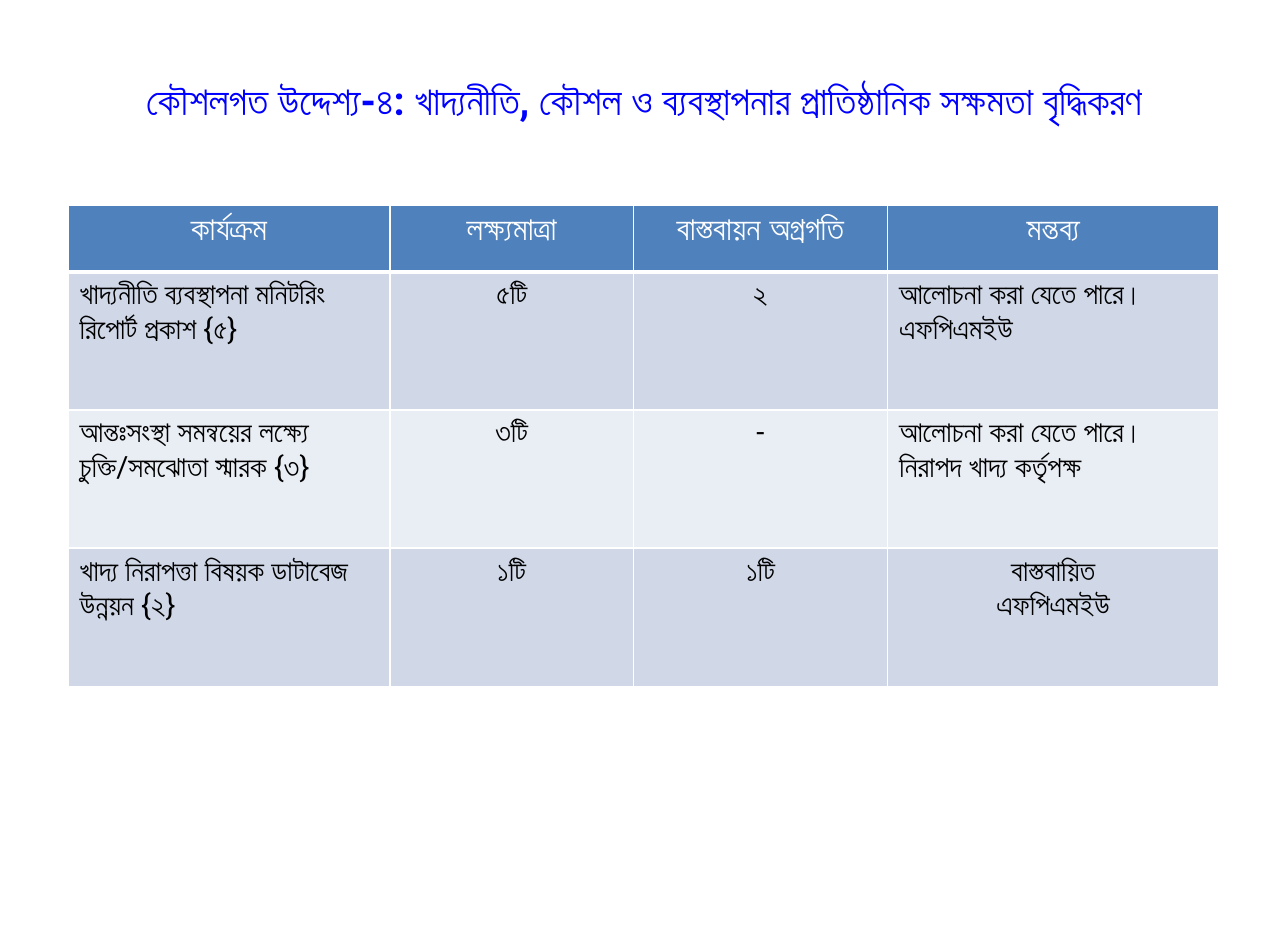
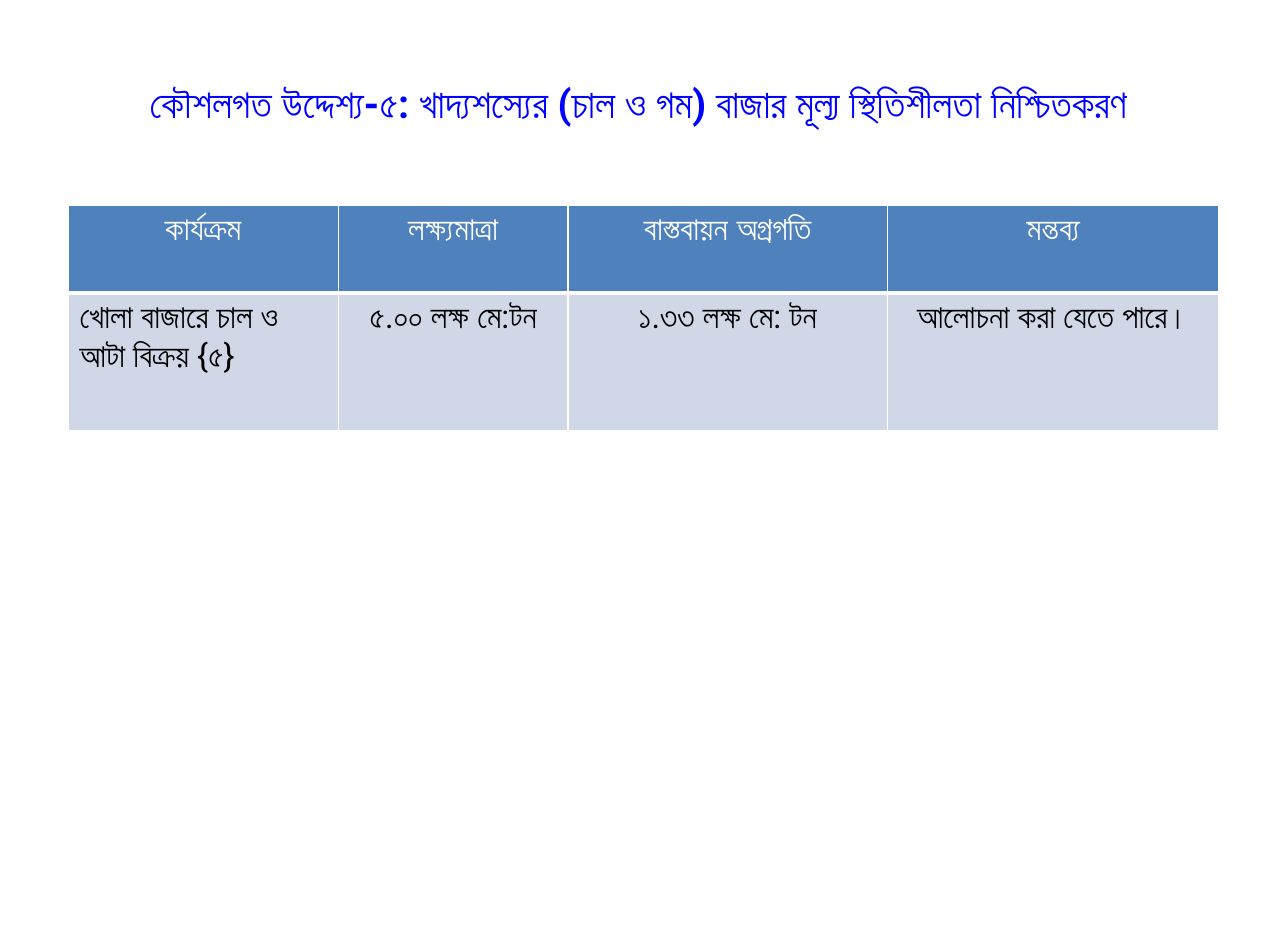
from dataclasses import dataclass

from lxml import etree
from pptx import Presentation
from pptx.dml.color import RGBColor
from pptx.enum.text import MSO_ANCHOR, PP_ALIGN
from pptx.oxml.ns import qn
from pptx.util import Emu, Pt

PX = 9144  # 100 px to the inch
LEFT, CENTER = PP_ALIGN.LEFT, PP_ALIGN.CENTER
MIDDLE = MSO_ANCHOR.MIDDLE
COLORS = {
    "title": "0000FF",
    "header": "4F81BD",
    "band_dark": "D0D8E8",
    "band_light": "E9EDF4",
    "white": "FFFFFF",
    "black": "000000",
}
HEADER_FONT, BODY_FONT = "Arial", "Roboto"
HEADERS = ("কার্যক্রম", "লক্ষ্যমাত্রা", "বাস্তবায়ন অগ্রগতি", "মন্তব্য")
TABLE_LEFT, TABLE_TOP = 58, 175
BODY_ROW_HEIGHT = 118
THIN, THICK = 1, 3


@dataclass(frozen=True)
class TextStyle:
    font: str
    size: float
    color: str
    bold: bool = False


@dataclass(frozen=True)
class Activity:
    name: str
    target: str
    progress: str
    remark: str
    remark_align: PP_ALIGN = LEFT


@dataclass(frozen=True)
class ObjectivePage:
    title: str
    title_left: int
    title_top: int
    column_widths: tuple[int, ...]
    header_height: int
    body_size: int
    activities: tuple[Activity, ...]


TITLE_STYLE = TextStyle(BODY_FONT, 24.3, "title", True)
HEADER_STYLE = TextStyle(HEADER_FONT, 20, "white", True)

PAGES = (
    ObjectivePage(
        "কৌশলগত উদ্দেশ্য-৪: খাদ্যনীতি, কৌশল ও ব্যবস্থাপনার প্রাতিষ্ঠানিক সক্ষমতা বৃদ্ধিকরণ",
        55, 26, (275, 208, 217, 283), 57, 18,
        (
            Activity("খাদ্যনীতি ব্যবস্থাপনা মনিটরিং রিপোর্ট প্রকাশ {৫}", "৫টি", "২",
                     "আলোচনা করা যেতে পারে।\nএফপিএমইউ"),
            Activity("আন্তঃসংস্থা সমন্বয়ের লক্ষ্যে চুক্তি/সমঝোতা স্মারক {৩}", "৩টি", "-",
                     "আলোচনা করা যেতে পারে।\nনিরাপদ খাদ্য কর্তৃপক্ষ"),
            Activity("খাদ্য নিরাপত্তা বিষয়ক ডাটাবেজ উন্নয়ন {২}", "১টি", "১টি",
                     "বাস্তবায়িত\nএফপিএমইউ", CENTER),
        ),
    ),
    ObjectivePage(
        "কৌশলগত উদ্দেশ্য-৫: খাদ্যশস্যের (চাল ও গম) বাজার মূল্য স্থিতিশীলতা নিশ্চিতকরণ",
        50, 29, (231, 196, 273, 283), 75, 20,
        (
            Activity("খোলা বাজারে চাল ও আটা বিক্রয় {৫}", "৫.০০ লক্ষ মে:টন",
                     "১.৩৩ লক্ষ মে: টন", "আলোচনা করা যেতে পারে।", CENTER),
        ),
    ),
)


def px(length: int) -> Emu:
    return Emu(length * PX)


def rgb(name: str) -> RGBColor:
    return RGBColor.from_string(COLORS[name])


def write_text(frame, text: str, style: TextStyle, align: PP_ALIGN) -> None:
    frame.text = text
    for para in frame.paragraphs:
        para.alignment = align
        for span in para.runs:
            span.font.name = style.font
            span.font.size = Pt(style.size)
            span.font.bold = style.bold
            span.font.color.rgb = rgb(style.color)
            # Bengali takes the complex-script font
            properties = span.font._element
            etree.SubElement(properties, qn("a:cs"), typeface=style.font)


def set_borders(cell, top: int, bottom: int) -> None:
    properties = cell._tc.get_or_add_tcPr()
    sides = (("L", THIN), ("R", THIN), ("T", top), ("B", bottom))
    for position, (side, width) in enumerate(sides):
        line = etree.Element(qn(f"a:ln{side}"), w=str(Pt(width)))
        fill = etree.SubElement(line, qn("a:solidFill"))
        etree.SubElement(fill, qn("a:srgbClr"), val=COLORS["white"])
        properties.insert(position, line)


def fill_cell(cell, text: str, style: TextStyle, align: PP_ALIGN, fill: str,
              top: int = THIN, bottom: int = THIN) -> None:
    write_text(cell.text_frame, text, style, align)
    cell.fill.solid()
    cell.fill.fore_color.rgb = rgb(fill)
    set_borders(cell, top, bottom)


def add_title(slide, page: ObjectivePage) -> None:
    box = slide.shapes.add_textbox(px(page.title_left), px(page.title_top), px(990), px(118))
    frame = box.text_frame
    frame.word_wrap = True
    frame.vertical_anchor = MIDDLE
    frame.margin_left = frame.margin_right = px(11)
    write_text(frame, page.title, TITLE_STYLE, CENTER)


def add_activity_table(slide, page: ObjectivePage) -> None:
    heights = [page.header_height] + [BODY_ROW_HEIGHT] * len(page.activities)
    table = slide.shapes.add_table(
        len(heights), len(HEADERS), px(TABLE_LEFT), px(TABLE_TOP),
        px(sum(page.column_widths)), px(sum(heights))).table
    for column, width in zip(table.columns, page.column_widths):
        column.width = px(width)
    for row, height in zip(table.rows, heights):
        row.height = px(height)

    # Header row
    for index, header in enumerate(HEADERS):
        fill_cell(table.cell(0, index), header, HEADER_STYLE, CENTER, "header", bottom=THICK)

    # Banded activity rows
    body_style = TextStyle(BODY_FONT, page.body_size, "black")
    for number, activity in enumerate(page.activities, start=1):
        band = "band_dark" if number % 2 else "band_light"
        top = THICK if number == 1 else THIN
        entries = (
            (activity.name, LEFT),
            (activity.target, CENTER),
            (activity.progress, CENTER),
            (activity.remark, activity.remark_align),
        )
        for index, (text, align) in enumerate(entries):
            fill_cell(table.cell(number, index), text, body_style, align, band, top=top)


def main() -> None:
    deck = Presentation()
    deck.slide_width, deck.slide_height = px(1100), px(800)
    blank = deck.slide_layouts[6]
    for page in PAGES:
        slide = deck.slides.add_slide(blank)
        add_title(slide, page)
        add_activity_table(slide, page)
    deck.save("out.pptx")


if __name__ == "__main__":
    main()
